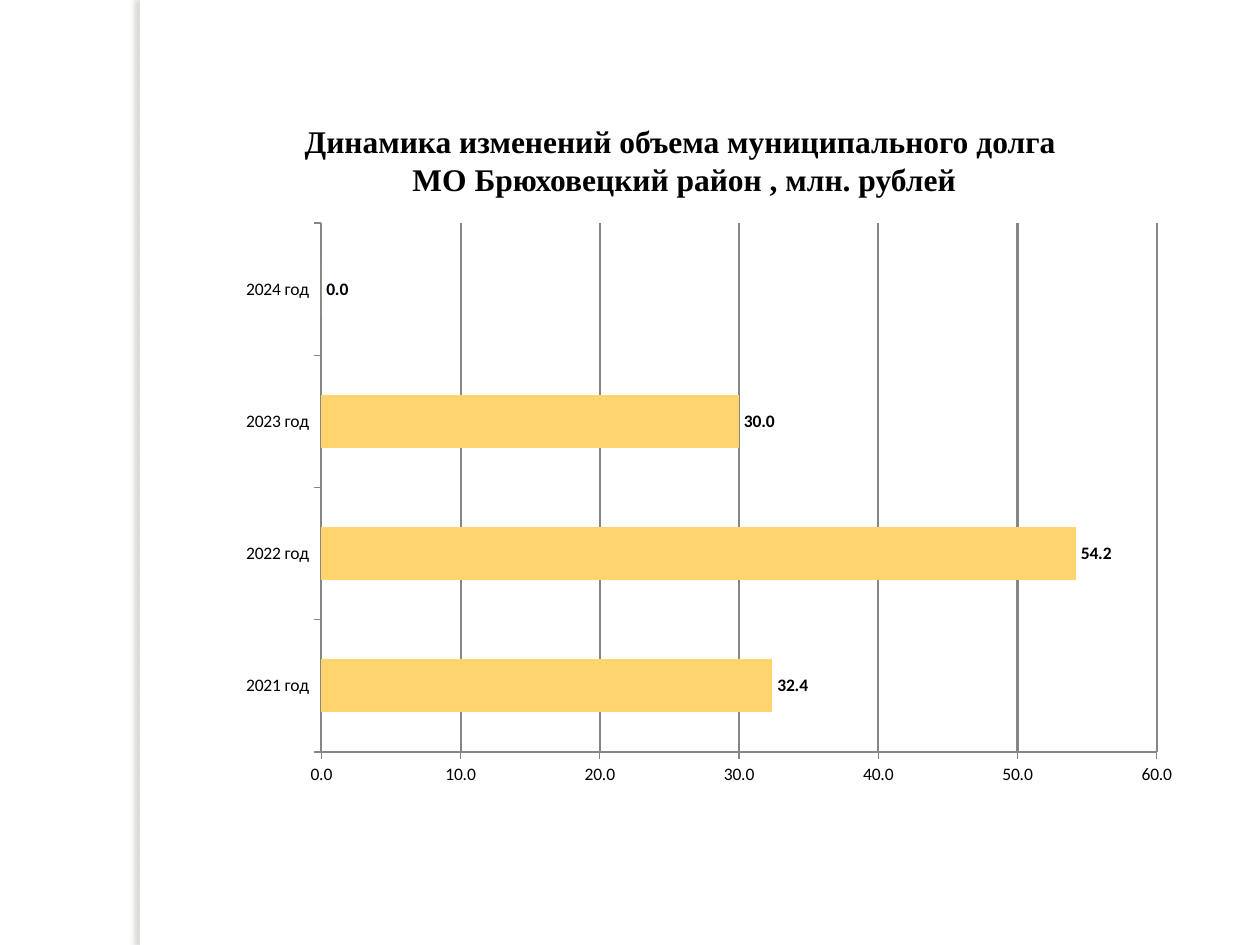
"""Build the slide on municipal debt dynamics with a bar chart by year."""
from lxml import etree
from pptx import Presentation, util as u
from pptx.chart import data
from pptx.dml import color
from pptx.enum import chart as ch, shapes, text
from pptx.oxml import parse_xml
from pptx.oxml.ns import nsdecls, qn

COLORS = {"paper": "FFFFFF", "ink": "000000", "bar": "FED46C", "grid": "868686", "shade": "736F63"}
RGB = {part: color.RGBColor.from_string(value) for part, value in COLORS.items()}

deck = Presentation()
deck.slide_width, deck.slide_height = u.Inches(10), u.Inches(7.5)
slide = deck.slides.add_slide(deck.slide_layouts[5])
slide.background.fill.solid()
slide.background.fill.fore_color.rgb = RGB["paper"]

side_strip = slide.shapes.add_shape(
    shapes.MSO_SHAPE.RECTANGLE, u.Inches(1.11), 0, u.Inches(0.08), u.Inches(7.5))
side_strip.fill.solid()
side_strip.fill.fore_color.rgb = RGB["paper"]
side_strip.line.fill.background()
side_strip.shadow.inherit = False
strip_effects = side_strip._element.spPr.find(qn("a:effectLst"))
strip_effects.append(parse_xml(
    f'<a:outerShdw {nsdecls("a")} blurRad="{u.Pt(3)}" dist="{u.Pt(3)}" dir="10800000" '
    f'algn="tl" rotWithShape="0"><a:srgbClr val="{COLORS["shade"]}"><a:alpha val="25000"/>'
    '</a:srgbClr></a:outerShdw>'))

heading = slide.shapes.title
heading_box = {"left": 1.77, "top": 0.92, "width": 7.32, "height": 0.71}
for side, length in heading_box.items():
    setattr(heading, side, u.Inches(length))
heading_frame = heading.text_frame
heading_frame.text = "Динамика изменений объема муниципального долга \nМО Брюховецкий район , млн. рублей"
frame_format = {"word_wrap": True, "auto_size": text.MSO_AUTO_SIZE.NONE,
                "vertical_anchor": text.MSO_ANCHOR.TOP}
for name, value in frame_format.items():
    setattr(heading_frame, name, value)
for line in heading_frame.paragraphs:
    line.alignment = text.PP_ALIGN.CENTER
    heading_font = line.runs[0].font
    for name, value in {"name": "Times New Roman", "size": u.Pt(18), "bold": True}.items():
        setattr(heading_font, name, value)
    heading_font.color.rgb = RGB["ink"]

debt = data.CategoryChartData(number_format="#,##0.0")
debt.categories = [f"{year} год" for year in range(2021, 2025)]
debt.add_series("Series 1", (32.4, 54.2, 30, 0))
debt_chart = slide.shapes.add_chart(
    ch.XL_CHART_TYPE.BAR_CLUSTERED, u.Inches(1.78), u.Inches(1.31),
    u.Inches(7.71), u.Inches(5.12), debt).chart
debt_chart.has_legend = False
debt_chart.has_title = False
debt_chart.font.name = "Calibri"
debt_chart.font.size = u.Pt(10)
debt_chart.font.color.rgb = RGB["ink"]

plot = debt_chart.plots[0]
plot.gap_width = 150
plot.vary_by_categories = False
bars = plot.series[0]
bars.format.fill.solid()
bars.format.fill.fore_color.rgb = RGB["bar"]
bars.format.line.fill.background()
value_labels = bars.data_labels
label_format = {"show_value": True, "number_format": "#,##0.0", "number_format_is_linked": False,
                "position": ch.XL_LABEL_POSITION.OUTSIDE_END}
for name, value in label_format.items():
    setattr(value_labels, name, value)
label_font = value_labels.font
for name, value in {"name": "Calibri", "size": u.Pt(10), "bold": True}.items():
    setattr(label_font, name, value)
label_font.color.rgb = RGB["ink"]

years, amounts = debt_chart.category_axis, debt_chart.value_axis
amount_format = {"minimum_scale": 0, "maximum_scale": 60, "major_unit": 10, "has_major_gridlines": True}
for name, value in amount_format.items():
    setattr(amounts, name, value)
amounts.tick_labels.number_format = "#,##0.0"
amounts.tick_labels.number_format_is_linked = False
for axis in (years, amounts):
    axis.major_tick_mark = ch.XL_TICK_MARK.OUTSIDE
    axis.minor_tick_mark = ch.XL_TICK_MARK.NONE
rules = ((years.format.line, 0.75), (amounts.format.line, 0.75), (amounts.major_gridlines.format.line, 1.25))
for rule, width in rules:
    rule.color.rgb = RGB["grid"]
    rule.width = u.Pt(width)

plot_area = debt_chart._chartSpace.chart.plotArea
for old_layout in plot_area.findall(qn("c:layout")):
    plot_area.remove(old_layout)
layout = etree.Element(qn("c:layout"))
manual = etree.SubElement(layout, qn("c:manualLayout"))
placement = {"layoutTarget": "inner", "xMode": "edge", "yMode": "edge",
             "x": 0.1, "y": 0.09, "w": 0.86, "h": 0.82}
for name, value in placement.items():
    etree.SubElement(manual, qn(f"c:{name}")).set("val", str(value))
plot_area.insert(0, layout)

deck.save("out.pptx")
